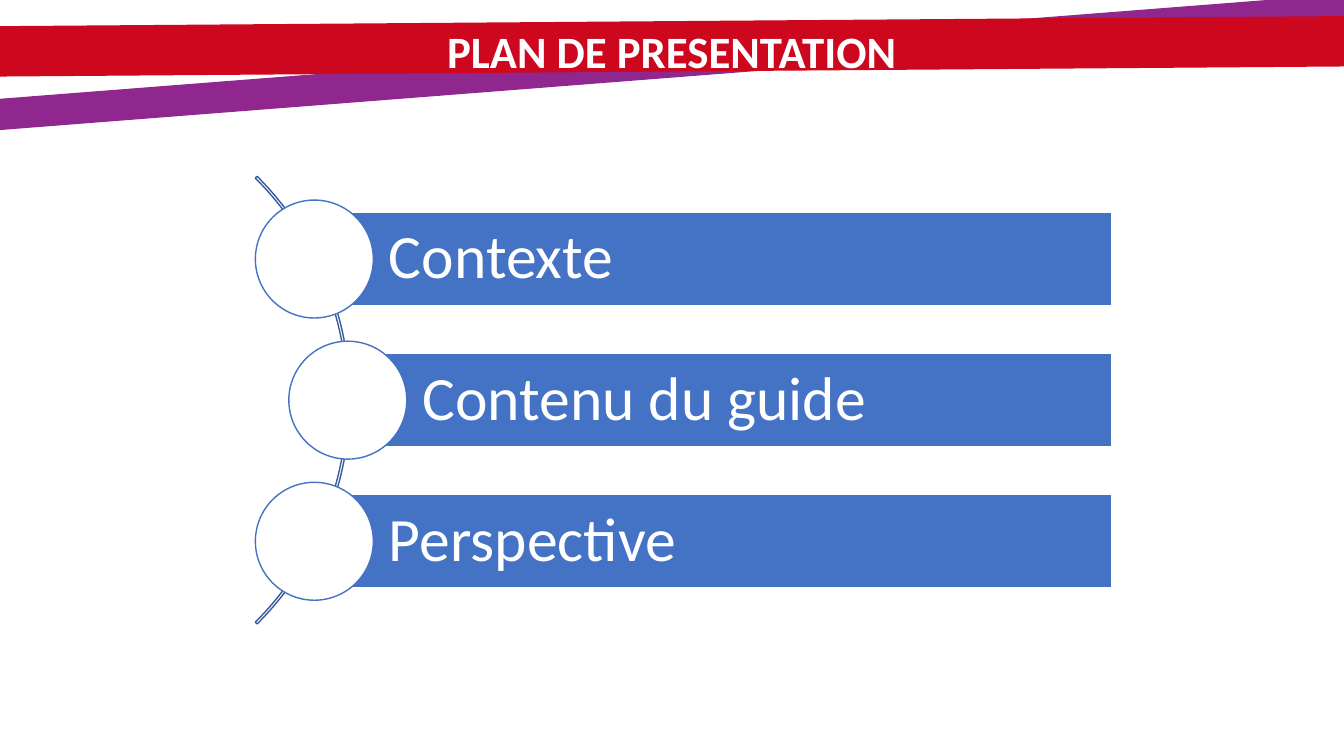
import math

import pptx
import pptx.dml.color
import pptx.enum.shapes
import pptx.enum.text
import pptx.util

Inches = pptx.util.Inches
SHAPES = pptx.enum.shapes.MSO_SHAPE
MIDDLE = pptx.enum.text.MSO_ANCHOR.MIDDLE
ALIGN = pptx.enum.text.PP_ALIGN

SLIDE_WIDTH, SLIDE_HEIGHT = 13.33, 7.5
FONT = "Calibri"
WHITE, RED, PURPLE = "FFFFFF", "CC071E", "90278E"
BLUE, DARK_BLUE = "4472C4", "365B9D"
TOPICS = ["Contexte", "Contenu du guide", "Perspective"]


def color(hex_value):
    return pptx.dml.color.RGBColor.from_string(hex_value)


def paint(shape, fill=None, line=None):
    """Apply a solid fill and a 1 pt line; None leaves either one out."""
    shape.shadow.inherit = False
    for part, hex_value in ((shape.fill, fill), (shape.line.fill, line)):
        if hex_value:
            part.solid()
            part.fore_color.rgb = color(hex_value)
        else:
            part.background()
    if line:
        shape.line.width = pptx.util.Pt(1)


def write(shape, text, size, align, frame_format, bold=False):
    frame = shape.text_frame
    frame.text = text
    para = frame.paragraphs[0]
    font = para.runs[0].font
    font.color.rgb = color(WHITE)
    formats = (
        (frame, {"word_wrap": True, "vertical_anchor": MIDDLE, **frame_format}),
        (para, {"alignment": align}),
        (font, {"name": FONT, "size": pptx.util.Pt(size), "bold": bold}),
    )
    for target, values in formats:
        for name, value in values.items():
            setattr(target, name, value)


def add_ribbon(slide, left_top, right_top, height, fill):
    """Draw a slanted band across the full slide width."""
    corners = [
        (SLIDE_WIDTH, right_top),
        (0, left_top),
        (0, left_top + height),
        (SLIDE_WIDTH, right_top + height),
    ]
    points = [(Inches(x), Inches(y)) for x, y in corners]
    builder = slide.shapes.build_freeform(*points[0])
    builder.add_line_segments(points[1:], close=True)
    ribbon = builder.convert_to_shape()
    paint(ribbon, fill)
    return ribbon


def add_header(slide, text):
    add_ribbon(slide, 0.98, -0.06, 0.31, PURPLE)
    ribbon = add_ribbon(slide, 0.26, 0.16, 0.5, RED)
    title = slide.shapes.title
    box = {"left": 0, "top": 0.23, "width": SLIDE_WIDTH, "height": 0.54}
    for name, value in box.items():
        setattr(title, name, Inches(value))
    frame_format = {"auto_size": pptx.enum.text.MSO_AUTO_SIZE.NONE}
    frame_format.update(margin_top=0, margin_bottom=0)
    write(title, text, 32, ALIGN.CENTER, frame_format, bold=True)
    ribbon.element.addnext(title.element)


def add_topic(slide, text, center_x, center_y, right):
    """Draw a bar that starts at the centre of its circle."""
    bar_height, diameter = 0.93, 1.17
    bar = slide.shapes.add_shape(
        SHAPES.RECTANGLE, Inches(center_x), Inches(center_y - bar_height / 2),
        Inches(right - center_x), Inches(bar_height))
    paint(bar, BLUE, WHITE)
    margins = {f"margin_{side}": Inches(0.12) for side in ("top", "right", "bottom")}
    write(bar, text, 44, ALIGN.LEFT, {**margins, "margin_left": Inches(0.74)})
    bar.text_frame.paragraphs[0].line_spacing = 0.9

    circle = slide.shapes.add_shape(
        SHAPES.OVAL, Inches(center_x - diameter / 2), Inches(center_y - diameter / 2),
        Inches(diameter), Inches(diameter))
    paint(circle, WHITE, BLUE)


def add_topic_arc(slide, topics, center_x, center_y, radius, right):
    """Place the topics at equal heights along an arc around the given centre."""
    arc = slide.shapes.add_shape(
        SHAPES.BLOCK_ARC, Inches(center_x - radius), Inches(center_y - radius),
        Inches(2 * radius), Inches(2 * radius))
    # Start and end angles of 315 and 45 degrees, then the band thickness
    for index, value in enumerate((189, 27, 0.004)):
        arc.adjustments[index] = value
    paint(arc, line=DARK_BLUE)

    step, track = 1.4, radius - 0.02
    for index, topic in enumerate(topics):
        offset = (index - (len(topics) - 1) / 2) * step
        x = center_x + math.sqrt(track ** 2 - offset ** 2)
        add_topic(slide, topic, x, center_y + offset, right)


def main():
    deck = pptx.Presentation()
    deck.slide_width = Inches(SLIDE_WIDTH)
    deck.slide_height = Inches(SLIDE_HEIGHT)
    slide = deck.slides.add_slide(deck.slide_layouts.get_by_name("Title Only"))
    add_header(slide, "PLAN DE PRESENTATION")
    add_topic_arc(slide, TOPICS, center_x=0.33, center_y=3.97, radius=3.14, right=11.03)
    deck.save("out.pptx")


if __name__ == "__main__":
    main()
